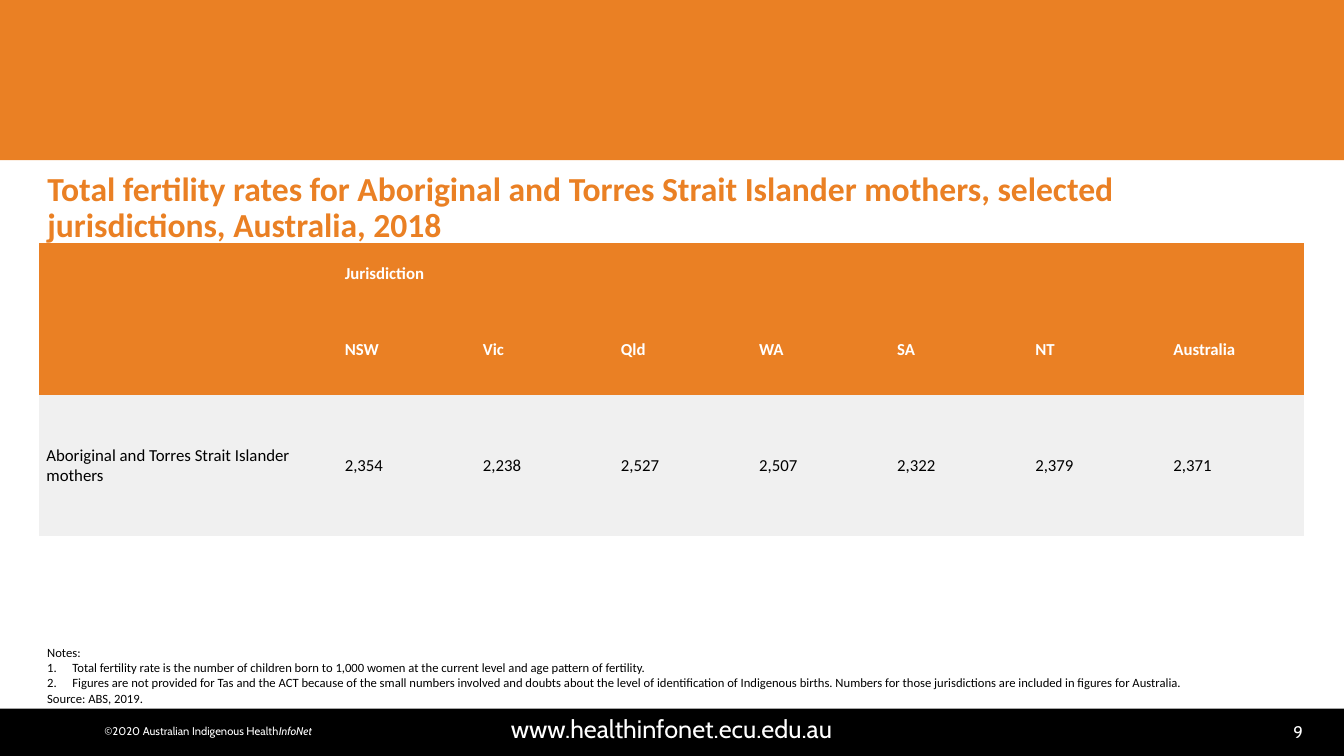
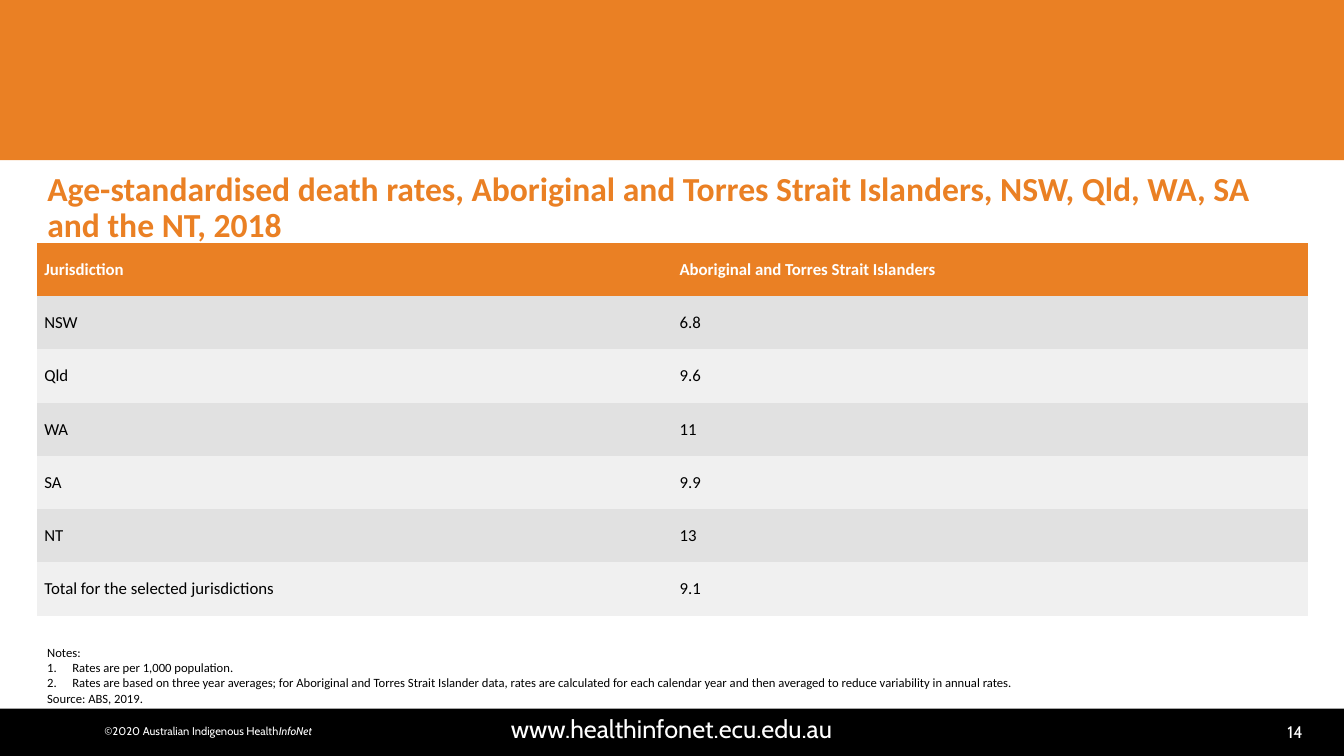
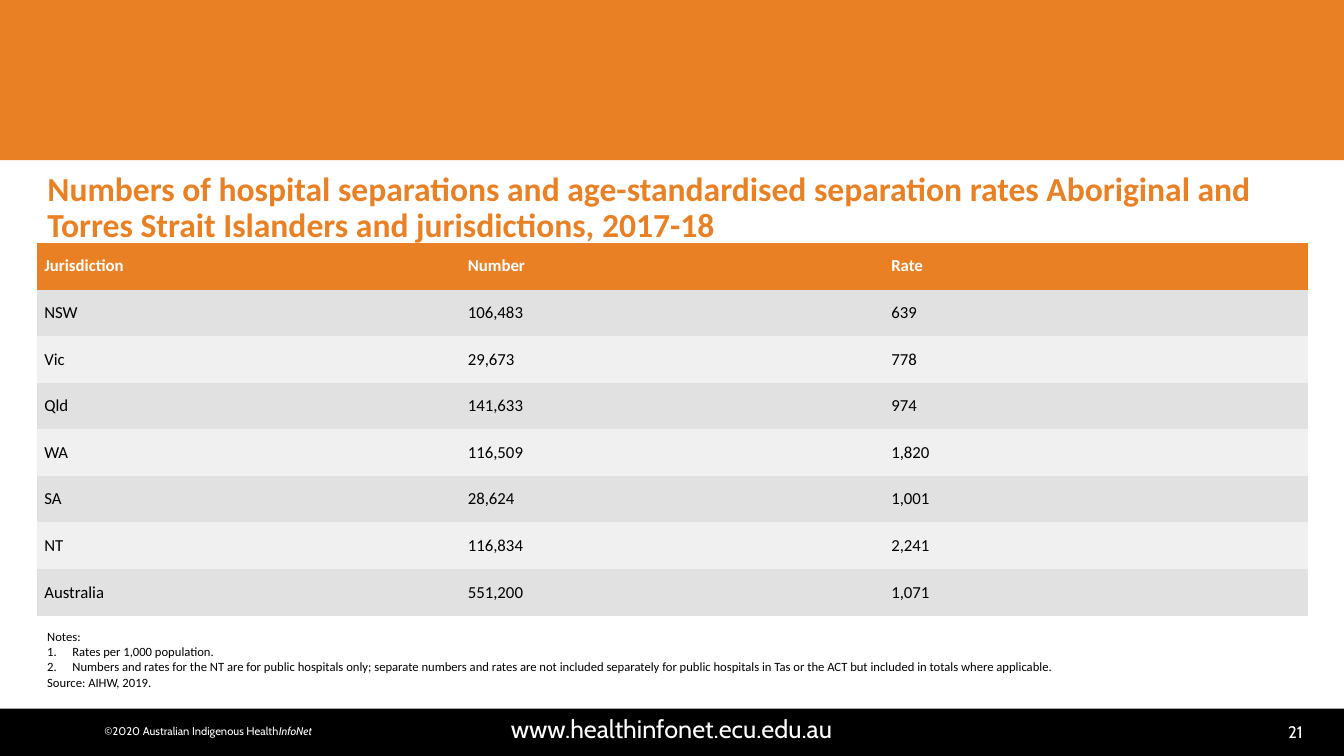
import pptx
import pptx.util
import pptx.dml.color
import pptx.enum.shapes
import pptx.enum.text
import lxml.etree
from pptx.oxml.ns import qn

Inches, Pt = pptx.util.Inches, pptx.util.Pt
RGBColor = pptx.dml.color.RGBColor
ALIGN = pptx.enum.text.PP_ALIGN
ANCHOR = pptx.enum.text.MSO_ANCHOR

ORANGE = RGBColor(0xEA, 0x80, 0x24)
BLACK = RGBColor(0, 0, 0)
WHITE = RGBColor(0xFF, 0xFF, 0xFF)
LIGHT_GREY = RGBColor(0xF0, 0xF0, 0xF0)
MID_GREY = RGBColor(0xE1, 0xE1, 0xE1)

WIDTH, HEIGHT = 13.33, 7.5
MARGIN = 0.37
CONTENT_WIDTH = 12.6
TABLE_TOP = 2.41
NO_STYLE_NO_GRID = "{2D5ABB26-0587-4C30-8999-92F81FD0307C}"

TITLE = {"name": "Calibri", "size": Pt(24), "bold": True, "color": ORANGE}
HEADER = {"name": "Calibri", "size": Pt(12), "bold": True, "color": WHITE}
BODY = {"name": "Calibri", "size": Pt(12), "bold": False, "color": BLACK}
NOTE = {"name": "Calibri", "size": Pt(9), "color": BLACK}
PAGE = {"name": "Cabin", "size": Pt(12), "color": WHITE}
ADDRESS = {**PAGE, "size": Pt(18)}
COPYRIGHT = {**PAGE, "size": Pt(8)}

BANDS = [
    ((-0.03, 0, 13.36, 1.59), ORANGE),
    ((0, 7.03, WIDTH, 0.47), BLACK),
]

SLIDES = [
    {
        "page": "9",
        "title": "Total fertility rates for Aboriginal and Torres Strait Islander mothers, "
                 "selected jurisdictions, Australia, 2018",
        "rows": [
            ["", "Jurisdiction", "", "", "", "", "", ""],
            ["", "NSW", "Vic", "Qld", "WA", "SA", "NT", "Australia"],
            ["Aboriginal and Torres Strait Islander mothers",
             "2,354", "2,238", "2,527", "2,507", "2,322", "2,379", "2,371"],
        ],
        "header_rows": 2,
        "merges": [((0, 0), (1, 0)), ((0, 1), (0, 7))],
        "stripes": [LIGHT_GREY],
        "table_left": 0.39,
        "columns": [2.96] + [1.37] * 7,
        "heights": [0.62, 0.89, 1.4],
        "notes_top": 6.35,
        "notes": [
            "Total fertility rate is the number of children born to 1,000 women at the "
            "current level and age pattern of fertility.",
            "Figures are not provided for Tas and the ACT because of the small numbers "
            "involved and doubts about the level of identification of Indigenous births. "
            "Numbers for those jurisdictions are included in figures for Australia.",
        ],
        "source": "Source: ABS, 2019.",
    },
    {
        "page": "14",
        "title": "Age-standardised death rates, Aboriginal and Torres Strait Islanders, "
                 "NSW, Qld, WA, SA and the NT, 2018",
        "rows": [
            ["Jurisdiction", "Aboriginal and Torres Strait Islanders"],
            ["NSW", "6.8"],
            ["Qld", "9.6"],
            ["WA", "11"],
            ["SA", "9.9"],
            ["NT", "13"],
            ["Total for the selected jurisdictions", "9.1"],
        ],
        "notes_top": 6.35,
        "notes": [
            "Rates are per 1,000 population.",
            "Rates are based on three year averages; for Aboriginal and Torres Strait "
            "Islander data, rates are calculated for each calendar year and then averaged "
            "to reduce variability in annual rates.",
        ],
        "source": "Source: ABS, 2019.",
    },
    {
        "page": "21",
        "title": "Numbers of hospital separations and age-standardised separation rates "
                 "Aboriginal and Torres Strait Islanders and jurisdictions, 2017-18",
        "rows": [
            ["Jurisdiction", "Number", "Rate"],
            ["NSW", "106,483", "639"],
            ["Vic", "29,673", "778"],
            ["Qld", "141,633", "974"],
            ["WA", "116,509", "1,820"],
            ["SA", "28,624", "1,001"],
            ["NT", "116,834", "2,241"],
            ["Australia", "551,200", "1,071"],
        ],
        "notes_top": 6.19,
        "notes": [
            "Rates per 1,000 population.",
            "Numbers and rates for the NT are for public hospitals only; separate numbers "
            "and rates are not included separately for public hospitals in Tas or the ACT "
            "but included in totals where applicable.",
        ],
        "source": "Source: AIHW, 2019.",
    },
]


def set_font(font, style):
    for attribute, value in style.items():
        if attribute == "color":
            font.color.rgb = value
        else:
            setattr(font, attribute, value)


def add_text(slide, box, runs, style, align, wrap=True):
    frame = slide.shapes.add_textbox(*map(Inches, box)).text_frame
    frame.word_wrap = wrap
    paragraph = frame.paragraphs[0]
    paragraph.alignment = align
    for text, extra in runs:
        run = paragraph.add_run()
        run.text = text
        set_font(run.font, {**style, **extra})


def add_bands_and_footer(slide, page):
    for box, color in BANDS:
        band = slide.shapes.add_shape(
            pptx.enum.shapes.MSO_SHAPE.RECTANGLE, *map(Inches, box))
        band.shadow.inherit = False
        band.fill.solid()
        band.fill.fore_color.rgb = color
        band.line.fill.background()
    add_text(slide, (11.95, 7.11, 1.07, 0.3), [(page, {})], PAGE, ALIGN.RIGHT)
    add_text(slide, (0.62, 7.03, 12.08, 0.39),
             [("www.healthinfonet.ecu.edu.au", {})], ADDRESS, ALIGN.CENTER)
    add_text(slide, (0.92, 7.14, 2.29, 0.24),
             [("©2020 Australian Indigenous Health", {}), ("InfoNet", {"italic": True})],
             COPYRIGHT, ALIGN.CENTER, wrap=False)


def set_title(slide, text):
    title = slide.shapes.title
    title.left, title.top, title.width, title.height = map(
        Inches, (MARGIN, 1.65, CONTENT_WIDTH, 0.84))
    frame = title.text_frame
    frame.text = text
    frame.auto_size = pptx.enum.text.MSO_AUTO_SIZE.NONE
    frame.vertical_anchor = ANCHOR.MIDDLE
    paragraph = frame.paragraphs[0]
    paragraph.alignment = ALIGN.LEFT
    paragraph.line_spacing = 0.9
    set_font(paragraph.runs[0].font, TITLE)


def fill_cell(cell, text, style, color):
    cell.fill.solid()
    cell.fill.fore_color.rgb = color
    cell.vertical_anchor = ANCHOR.MIDDLE
    cell.margin_left = cell.margin_right = Inches(0.07)
    cell.margin_top = cell.margin_bottom = 0
    cell.text = text
    paragraph = cell.text_frame.paragraphs[0]
    paragraph.space_after = Pt(5)
    set_font(paragraph.font, style)
    for run in paragraph.runs:
        set_font(run.font, style)


def add_data_table(slide, content):
    rows = content["rows"]
    row_count, column_count = len(rows), len(rows[0])
    columns = content.get("columns", [CONTENT_WIDTH / column_count] * column_count)
    heights = content.get("heights", [3.7 / row_count] * row_count)
    header_rows = content.get("header_rows", 1)
    stripes = content.get("stripes", [MID_GREY, LIGHT_GREY])
    box = (content.get("table_left", MARGIN), TABLE_TOP, sum(columns), sum(heights))
    table = slide.shapes.add_table(row_count, column_count, *map(Inches, box)).table
    table._tbl.tblPr.find(qn("a:tableStyleId")).text = NO_STYLE_NO_GRID
    table.horz_banding = False
    for column, width in zip(table.columns, columns):
        column.width = Inches(width)
    for r, (row, height) in enumerate(zip(rows, heights)):
        table.rows[r].height = Inches(height)
        is_header = r < header_rows
        color = ORANGE if is_header else stripes[(r - header_rows) % len(stripes)]
        for c, text in enumerate(row):
            fill_cell(table.cell(r, c), text, HEADER if is_header else BODY, color)
    for first, last in content.get("merges", []):
        table.cell(*first).merge(table.cell(*last))


def add_notes(slide, content):
    box = (MARGIN, content["notes_top"], CONTENT_WIDTH, 0.71)
    frame = slide.shapes.add_textbox(*map(Inches, box)).text_frame
    frame.word_wrap = True
    lines = ["Notes:", *content["notes"], content["source"]]
    for i, line in enumerate(lines):
        paragraph = frame.add_paragraph() if i else frame.paragraphs[0]
        if line in content["notes"]:
            properties = paragraph._p.get_or_add_pPr()
            properties.set("marL", str(Inches(0.25)))
            properties.set("indent", str(-Inches(0.25)))
            lxml.etree.SubElement(properties, qn("a:buAutoNum"), type="arabicPeriod")
        run = paragraph.add_run()
        run.text = line
        set_font(run.font, NOTE)


def main():
    deck = pptx.Presentation()
    deck.slide_width, deck.slide_height = Inches(WIDTH), Inches(HEIGHT)
    title_only = deck.slide_layouts[5]
    for content in SLIDES:
        slide = deck.slides.add_slide(title_only)
        add_bands_and_footer(slide, content["page"])
        set_title(slide, content["title"])
        add_data_table(slide, content)
        add_notes(slide, content)
    deck.save("out.pptx")


if __name__ == "__main__":
    main()
